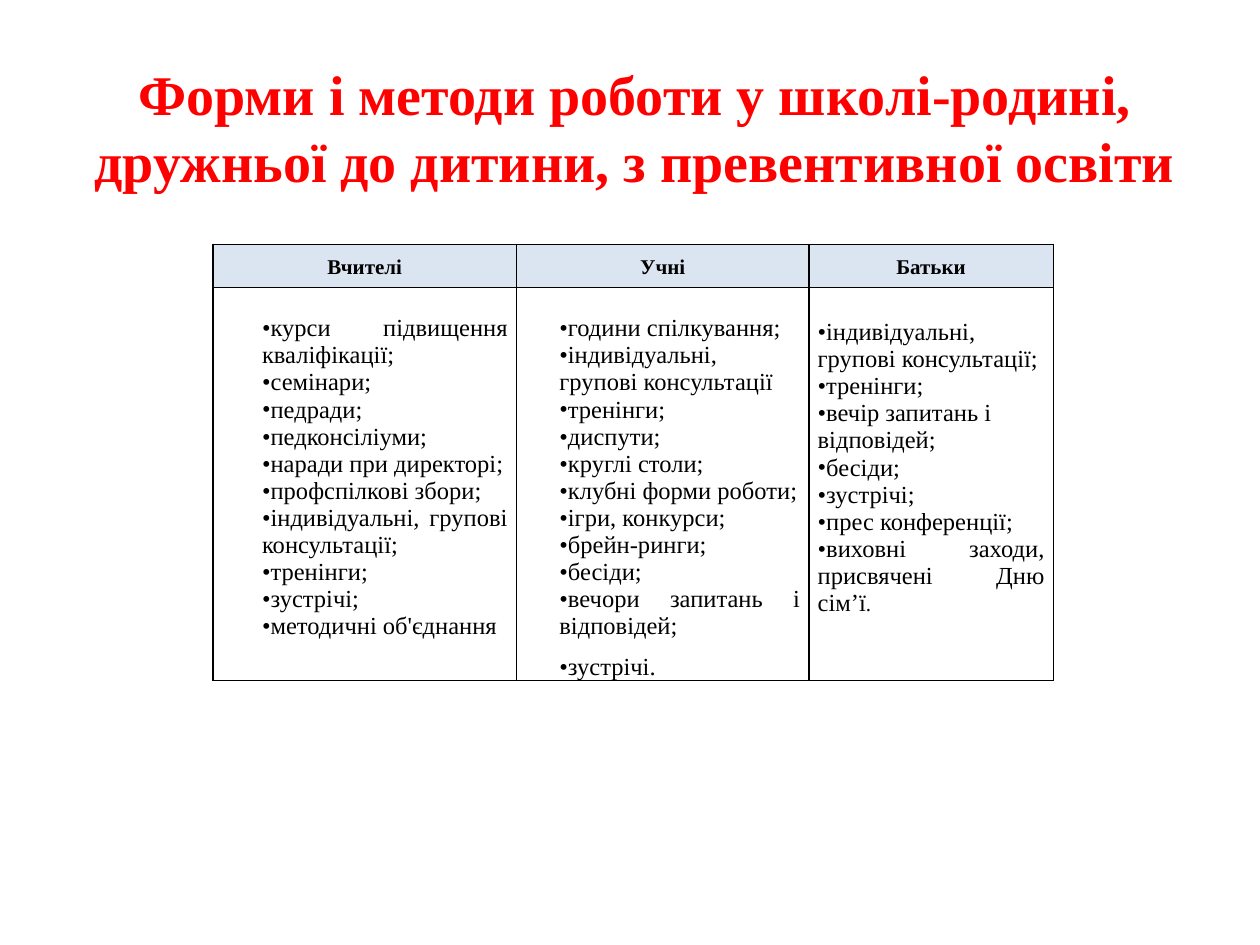
from pptx import Presentation
from pptx.dml.color import RGBColor
from pptx.enum.text import MSO_ANCHOR, PP_ALIGN
from pptx.oxml import parse_xml
from pptx.oxml.ns import nsdecls
from pptx.util import Inches, Pt

RED = RGBColor(0xFF, 0x00, 0x00)
BLACK = RGBColor(0x00, 0x00, 0x00)
PALE_BLUE = RGBColor(0xDB, 0xE5, 0xF1)
FONT = "Times New Roman"

TITLE = "Форми і методи роботи у школі-родині, дружньої до дитини, з превентивної освіти\v"
# "left" lists the positions of the items that are not justified.
COLUMNS = [
    {"heading": "Вчителі", "width": 2.41, "indent": 0.32, "top": 0.22, "left": (), "items": [
        "курси підвищення кваліфікації;", "семінари;", "педради;",
        "педконсіліуми;", "наради при директорі;", "профспілкові збори;",
        "індивідуальні, групові консультації;", "тренінги;", "зустрічі;",
        "методичні об'єднання"]},
    {"heading": "Учні", "width": 2.32, "indent": 0.27, "top": 0.22, "left": (5,), "items": [
        "години спілкування;", "індивідуальні, групові консультації",
        "тренінги;", "диспути;", "круглі столи;", "клубні форми роботи;",
        "ігри, конкурси;", "брейн-ринги;", "бесіди;",
        "вечори запитань і відповідей;", "зустрічі."]},
    {"heading": "Батьки", "width": 1.94, "indent": 0, "top": 0.25, "left": (0, 2, 3, 4, 5), "items": [
        "індивідуальні, групові консультації;", "тренінги;",
        "вечір запитань і відповідей;", "бесіди;", "зустрічі;",
        "прес конференції;", "виховні заходи, присвячені Дню сім’ї."]},
]
WIDE_SPACED = "зустрічі."
SMALL_STOP = "сім’ї."
ROW_HEIGHTS = (0.34, 3.11)

TITLE_FORMAT = {"name": FONT, "size": Pt(32), "bold": True}
HEADING_FORMAT = {"name": FONT, "size": Pt(12), "bold": True}
ITEM_FORMAT = {"name": FONT, "size": Pt(14), "bold": False}


def format_font(font, values, color=BLACK):
    for name, value in values.items():
        setattr(font, name, value)
    font.color.rgb = color


def prepare_cell(cell, top=0):
    """Set the margins and a thin black border on all four sides."""
    cell.margin_left = cell.margin_right = Inches(0.07)
    cell.margin_top, cell.margin_bottom = Inches(top), 0
    properties = cell._tc.get_or_add_tcPr()
    for position, side in enumerate(("lnL", "lnR", "lnT", "lnB")):
        properties.insert(position, parse_xml(
            f'<a:{side} {nsdecls("a")} w="12700"><a:solidFill>'
            f'<a:srgbClr val="{BLACK}"/></a:solidFill></a:{side}>'))


def add_bullet(paragraph, indent):
    properties = paragraph._p.get_or_add_pPr()
    properties.set("marL", str(Inches(indent)))
    properties.set("indent", "0")
    for element in (f'buFont {nsdecls("a")} typeface="{FONT}"',
                    f'buChar {nsdecls("a")} char="•"'):
        properties.append(parse_xml(f"<a:{element}/>"))


def fill_heading(cell, text):
    prepare_cell(cell)
    cell.vertical_anchor = MSO_ANCHOR.MIDDLE
    cell.fill.solid()
    cell.fill.fore_color.rgb = PALE_BLUE
    paragraph = cell.text_frame.paragraphs[0]
    paragraph.alignment = PP_ALIGN.CENTER
    paragraph.line_spacing = 1.15
    run = paragraph.add_run()
    run.text = text
    format_font(run.font, HEADING_FORMAT)


def fill_items(cell, column):
    prepare_cell(cell, column["top"])
    cell.fill.background()
    frame = cell.text_frame
    for index, item in enumerate(column["items"]):
        paragraph = frame.add_paragraph() if index else frame.paragraphs[0]
        paragraph.alignment = PP_ALIGN.LEFT if index in column["left"] else PP_ALIGN.JUSTIFY
        if item == WIDE_SPACED:
            paragraph.line_spacing = 1.5
        add_bullet(paragraph, column["indent"])
        parts = [item[:-1], "."] if item.endswith(SMALL_STOP) else [item]
        for part in parts:
            run = paragraph.add_run()
            run.text = part
            format_font(run.font, ITEM_FORMAT)
            if part == ".":
                run.font.size = Pt(12)


presentation = Presentation()
presentation.slide_width, presentation.slide_height = Inches(10), Inches(7.5)
slide = presentation.slides.add_slide(presentation.slide_layouts[5])

title = slide.shapes.title
title.left, title.top = Inches(0.35), Inches(0.6)
title.width, title.height = Inches(9.38), Inches(1.34)
title.text_frame.text = TITLE
title.text_frame.vertical_anchor = MSO_ANCHOR.MIDDLE
paragraph = title.text_frame.paragraphs[0]
paragraph.alignment = PP_ALIGN.CENTER
format_font(paragraph.font, TITLE_FORMAT, RED)
for run in paragraph.runs:
    format_font(run.font, TITLE_FORMAT, RED)

table = slide.shapes.add_table(
    len(ROW_HEIGHTS), len(COLUMNS), Inches(1.69), Inches(1.94),
    Inches(sum(column["width"] for column in COLUMNS)),
    Inches(sum(ROW_HEIGHTS))).table
for row, height in zip(table.rows, ROW_HEIGHTS):
    row.height = Inches(height)
for index, column in enumerate(COLUMNS):
    table.columns[index].width = Inches(column["width"])
    fill_heading(table.cell(0, index), column["heading"])
    fill_items(table.cell(1, index), column)

presentation.save("out.pptx")
